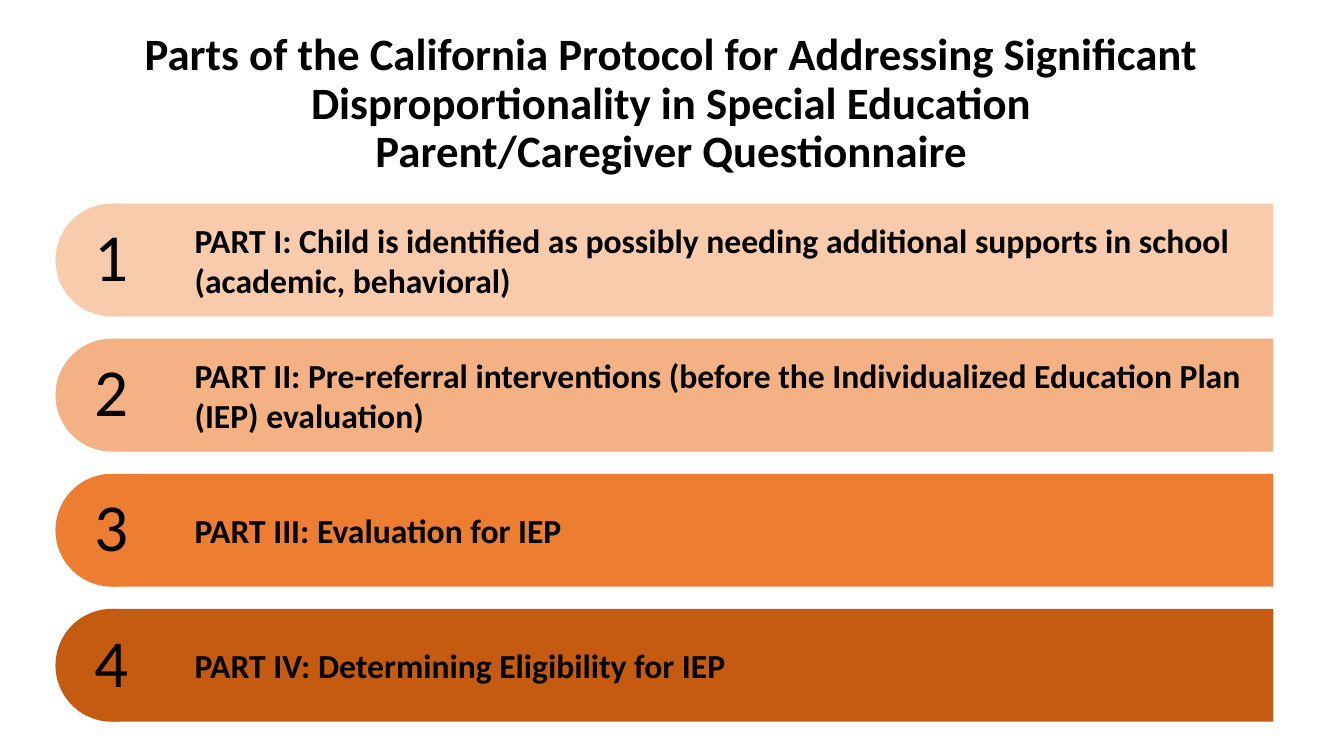
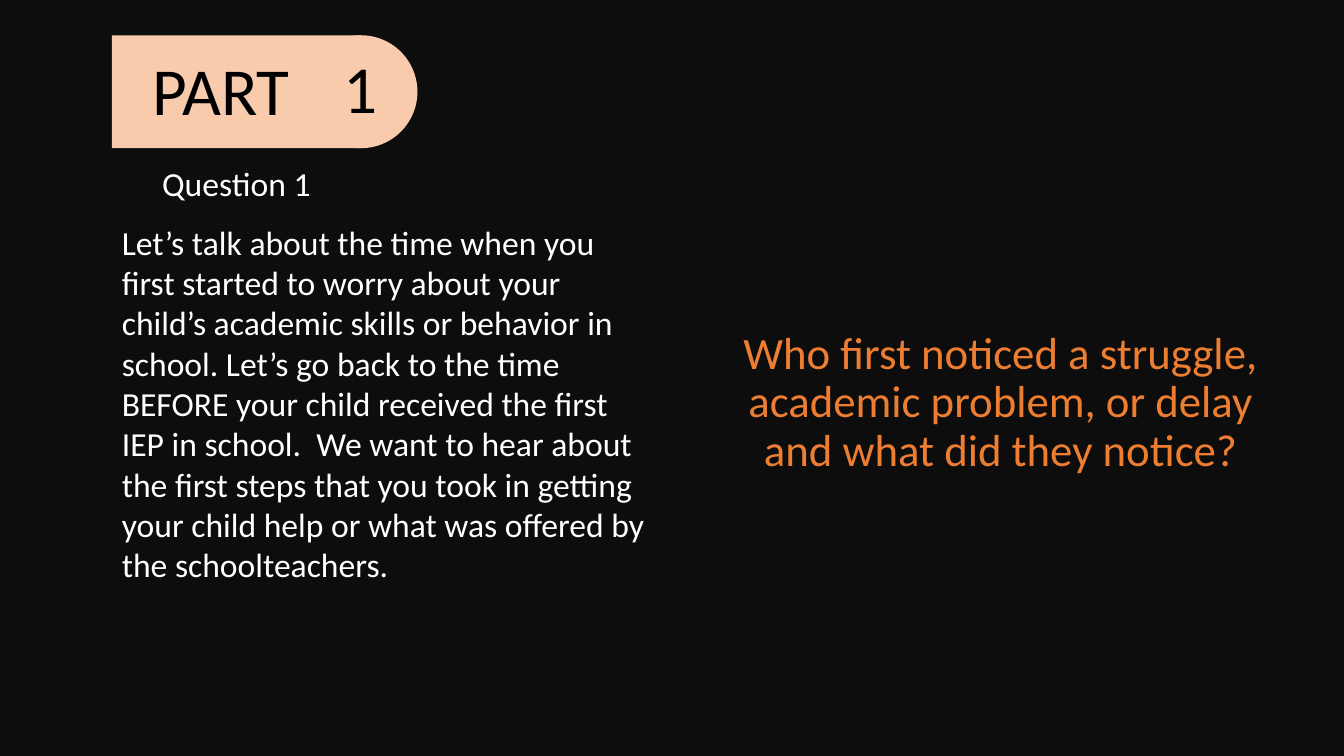
from dataclasses import dataclass

from pptx import Presentation
from pptx.dml.color import RGBColor
from pptx.enum.shapes import MSO_SHAPE
from pptx.enum.text import MSO_ANCHOR, PP_ALIGN
from pptx.util import Inches, Pt


@dataclass(frozen=True)
class Theme:
    font: str = "Calibri"
    ink: str = "000000"
    paper: str = "FFFFFF"
    night: str = "0D0D0D"
    accent: str = "ED7D31"
    band_colors: tuple = ("F8CBAD", "F4B183", "ED7D31", "C55A11")
    marker_size: int = 48
    title_size: int = 32
    body_size: int = 24
    tight: float = 0.9
    band_height: float = 1.12


THEME = Theme()

TITLE = ("Parts of the California Protocol for Addressing Significant "
         "Disproportionality in Special Education\v"
         "Parent/Caregiver Questionnaire")
PART_LABELS = (
    "PART I: Child is identified as possibly needing additional supports in school\n"
    "(academic, behavioral)",
    "PART II: Pre-referral interventions (before the Individualized Education Plan "
    "(IEP) evaluation)",
    "PART III: Evaluation for IEP",
    "PART IV: Determining Eligibility for IEP",
)
STORY = ("Let’s talk about the time when you first started to worry about your "
         "child’s academic skills or behavior in school. Let’s go back to the time "
         "BEFORE your child received the first IEP in school.  We want to hear about "
         "the first steps that you took in getting your child help or what was "
         "offered by the schoolteachers.")
QUESTION = ("Who first noticed a struggle, academic problem, or delay "
            "and what did they notice?")


def write(shape, text, size, color=THEME.ink, bold=False, align=PP_ALIGN.LEFT,
          spacing=1.0, insets=(0.1, 0.05, 0.1, 0.05)):
    """Fill a shape with vertically centred, wrapped text."""
    frame = shape.text_frame
    frame.text = text
    frame.word_wrap = True
    frame.vertical_anchor = MSO_ANCHOR.MIDDLE
    (frame.margin_left, frame.margin_top,
     frame.margin_right, frame.margin_bottom) = map(Inches, insets)
    for para in frame.paragraphs:
        para.alignment = align
        para.line_spacing = spacing
        for span in para.runs:
            span.font.name = THEME.font
            span.font.size = Pt(size)
            span.font.bold = bold
            span.font.color.rgb = RGBColor.from_string(color)


def add_text(slide, box, text, size, **style):
    write(slide.shapes.add_textbox(*map(Inches, box)), text, size, **style)


def add_block(slide, kind, box, color):
    block = slide.shapes.add_shape(kind, *map(Inches, box))
    block.shadow.inherit = False
    block.fill.solid()
    block.fill.fore_color.rgb = RGBColor.from_string(color)
    block.line.fill.background()
    return block


def add_band(slide, left, top, width, color, number, round_right=False):
    """Draw a band whose numbered round cap is centred on one end; return the bar."""
    height = THEME.band_height
    bar = add_block(slide, MSO_SHAPE.RECTANGLE, (left, top, width, height), color)
    cap_left = left + (width if round_right else 0) - height / 2
    cap = add_block(slide, MSO_SHAPE.OVAL, (cap_left, top, height, height), color)
    write(cap, str(number), THEME.marker_size, align=PP_ALIGN.CENTER,
          spacing=THEME.tight, insets=(0.09, 0.01, 0.09, 0.01))
    return bar


def build_overview(slide):
    add_text(slide, (0.91, 0.27, 11.5, 1.54), TITLE, THEME.title_size, bold=True,
             align=PP_ALIGN.CENTER, spacing=THEME.tight)
    first_top, pitch = 2.02, 1.34
    for index, (label, color) in enumerate(zip(PART_LABELS, THEME.band_colors)):
        bar = add_band(slide, 1.11, first_top + index * pitch, 11.52, color, index + 1)
        write(bar, label, THEME.body_size, bold=True, insets=(0.82, 0.05, 0.1, 0.05))


def build_question(slide, part, number, story, question):
    slide.background.fill.solid()
    slide.background.fill.fore_color.rgb = RGBColor.from_string(THEME.night)
    left, width = 1.11, 2.47
    bar = add_band(slide, left, 0.35, width, THEME.band_colors[part - 1], part,
                   round_right=True)
    write(bar, "PART", THEME.marker_size, align=PP_ALIGN.CENTER,
          spacing=THEME.tight, insets=(0.09, 0.04, 0.39, 0.01))
    add_text(slide, (left, 1.61, width, 0.46), f"Question {number}", THEME.body_size,
             color=THEME.paper, align=PP_ALIGN.CENTER, spacing=THEME.tight)
    add_text(slide, (left, 1.82, 5.41, 4.36), story, THEME.body_size,
             color=THEME.paper)
    add_text(slide, (7.22, 1.89, 5.41, 4.22), question, THEME.title_size,
             color=THEME.accent, align=PP_ALIGN.CENTER, spacing=THEME.tight)


def main():
    deck = Presentation()
    deck.slide_width, deck.slide_height = Inches(13.33), Inches(7.5)
    blank = deck.slide_layouts[6]
    build_overview(deck.slides.add_slide(blank))
    build_question(deck.slides.add_slide(blank), 1, 1, STORY, QUESTION)
    deck.save("out.pptx")


if __name__ == "__main__":
    main()
